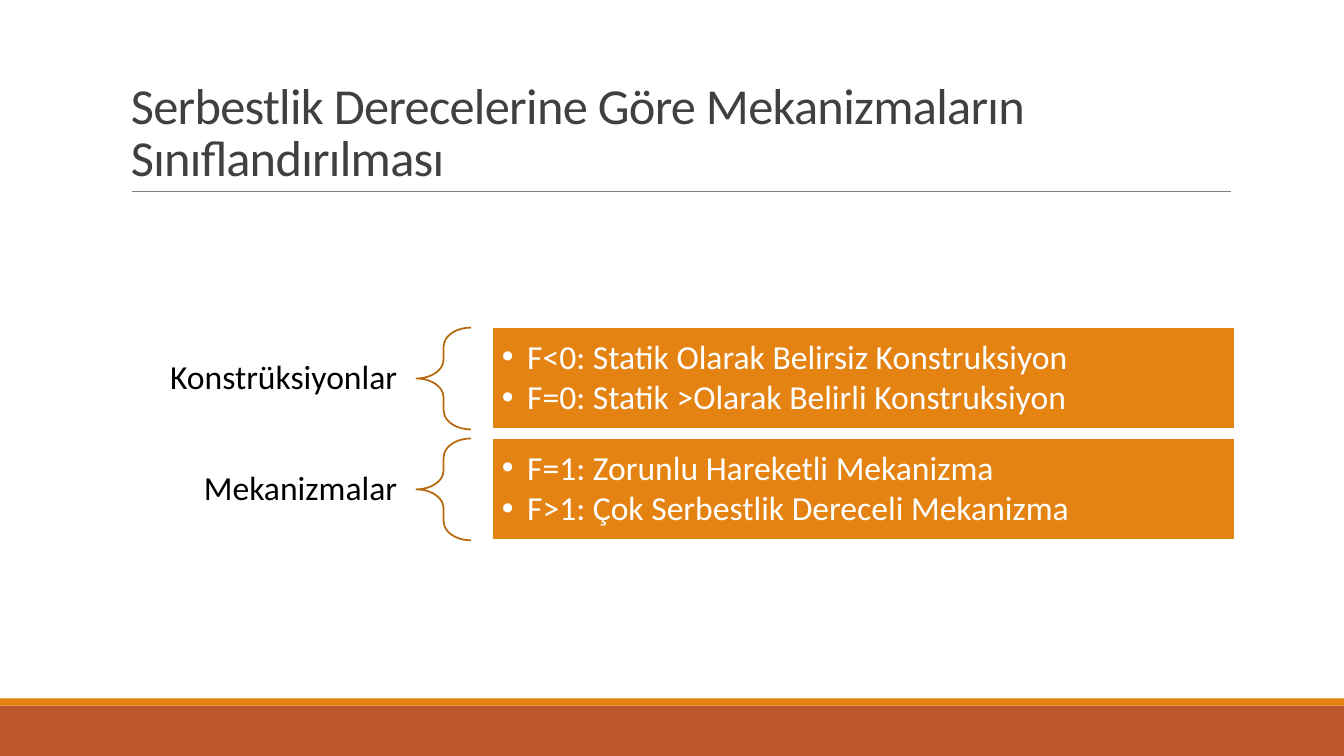
from dataclasses import dataclass

from lxml.etree import SubElement
from pptx import Presentation
from pptx.dml.color import RGBColor
from pptx.enum.shapes import MSO_CONNECTOR, MSO_SHAPE
from pptx.enum.text import MSO_ANCHOR, PP_ALIGN
from pptx.oxml.ns import qn
from pptx.util import Inches, Pt


@dataclass(frozen=True)
class Theme:
    font: str = "Calibri"
    head: int = 36
    body: int = 24
    gray: str = "404040"
    rule: str = "808080"
    black: str = "000000"
    white: str = "FFFFFF"
    gold: str = "E48312"
    rust: str = "BD582C"
    brown: str = "B7690E"


THEME = Theme()
GROUPS = [
    ("Konstrüksiyonlar", [
        "F<0: Statik Olarak Belirsiz Konstruksiyon",
        "F=0: Statik >Olarak Belirli Konstruksiyon",
    ]),
    ("Mekanizmalar", [
        "F=1: Zorunlu Hareketli Mekanizma",
        "F>1: Çok Serbestlik Dereceli Mekanizma",
    ]),
]


def add_form(slide, kind, box, fill=None, line=None):
    form = slide.shapes.add_shape(kind, *map(Inches, box))
    form.shadow.inherit = False
    if fill:
        form.fill.solid()
        form.fill.fore_color.rgb = RGBColor.from_string(fill)
    else:
        form.fill.background()
    if line:
        form.line.color.rgb = RGBColor.from_string(line)
        form.line.width = Pt(1.25)
    else:
        form.line.fill.background()
    return form


def set_frame(frame, anchor, side, edge):
    frame.word_wrap = True
    frame.vertical_anchor = anchor
    frame.margin_left = frame.margin_right = Inches(side)
    frame.margin_top = frame.margin_bottom = Inches(edge)


def add_run(para, text, size, color, align=PP_ALIGN.LEFT, pitch=0.9):
    para.alignment = align
    para.line_spacing = pitch
    run = para.add_run()
    run.text = text
    run.font.name = THEME.font
    run.font.size = Pt(size)
    run.font.color.rgb = RGBColor.from_string(color)
    return run


def add_bullet(para):
    para.space_after = Pt(3)
    props = para._p.get_or_add_pPr()
    props.set("marL", str(Inches(0.25)))
    props.set("indent", str(-Inches(0.25)))
    SubElement(props, qn("a:buFont")).set("typeface", "Arial")
    SubElement(props, qn("a:buChar")).set("char", "•")


def add_title(slide, box, text):
    left, top, width, height = box
    frame = slide.shapes.add_textbox(*map(Inches, box)).text_frame
    set_frame(frame, MSO_ANCHOR.BOTTOM, 0.1, 0.05)
    run = add_run(frame.paragraphs[0], text, THEME.head, THEME.gray, pitch=0.85)
    run._r.get_or_add_rPr().set("spc", "-50")
    base = Inches(top + height)
    rule = slide.shapes.add_connector(
        MSO_CONNECTOR.STRAIGHT,
        Inches(left + 0.11), base, Inches(left + width + 0.01), base)
    rule.line.color.rgb = RGBColor.from_string(THEME.rule)
    rule.line.width = Pt(0.5)
    SubElement(rule._element.spPr, qn("a:effectLst"))


def add_group(slide, box, label, items):
    left, top, width, height = box
    name, brace, gap = 2.71, 0.54, 0.21
    note = slide.shapes.add_textbox(*map(Inches, (left, top, name, height)))
    set_frame(note.text_frame, MSO_ANCHOR.MIDDLE, 0.19, 0.07)
    add_run(note.text_frame.paragraphs[0], label, THEME.body, THEME.black,
            PP_ALIGN.RIGHT)

    curve = add_form(slide, MSO_SHAPE.LEFT_BRACE,
                     (left + name, top, brace, height), line=THEME.brown)
    curve.adjustments[0] = 0.35
    curve.adjustments[1] = 0.5

    start = name + brace + gap
    panel = add_form(slide, MSO_SHAPE.RECTANGLE,
                     (left + start, top, width - start, height),
                     THEME.gold, THEME.white)
    frame = panel.text_frame
    set_frame(frame, MSO_ANCHOR.MIDDLE, 0.1, 0.1)
    for i, item in enumerate(items):
        para = frame.add_paragraph() if i else frame.paragraphs[0]
        add_run(para, item, THEME.body, THEME.white)
        add_bullet(para)


def add_list(slide, box, groups, gap=0.09):
    left, top, width, height = box
    row = (height - gap * (len(groups) - 1)) / len(groups)
    for i, (label, items) in enumerate(groups):
        place = (left, top + i * (row + gap), width, row)
        add_group(slide, place, label, items)


def add_foot(slide, box):
    left, top, width, height = box
    strip = 0.07
    add_form(slide, MSO_SHAPE.RECTANGLE,
             (left, top + strip, width, height - strip), THEME.rust)
    add_form(slide, MSO_SHAPE.RECTANGLE, (left, top, width, strip), THEME.gold)


def main():
    deck = Presentation()
    deck.slide_width = Inches(13.33)
    deck.slide_height = Inches(7.5)
    slide = deck.slides.add_slide(deck.slide_layouts[6])
    add_foot(slide, (0, 6.93, 13.33, 0.57))
    add_title(slide, (1.2, 0.31, 11, 1.59),
              "Serbestlik Derecelerine Göre Mekanizmaların Sınıflandırılması")
    add_list(slide, (1.42, 3.25, 10.83, 2.11), GROUPS)
    deck.save("out.pptx")


if __name__ == "__main__":
    main()
